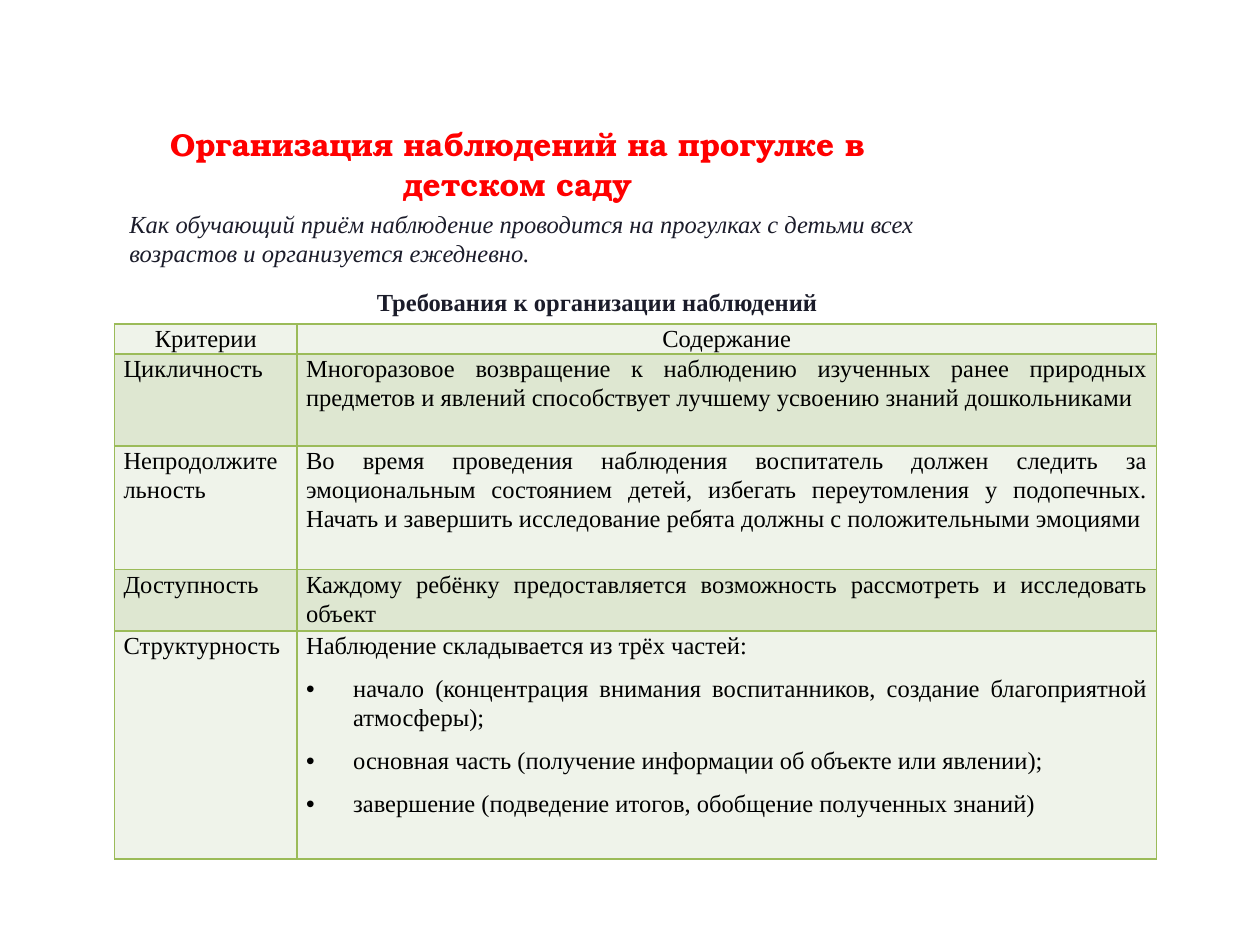
import lxml.etree
import pptx
import pptx.dml.color
import pptx.enum.text
import pptx.oxml
import pptx.oxml.ns
import pptx.util

Cm = pptx.util.Cm
Pt = pptx.util.Pt
ALIGN = pptx.enum.text.PP_ALIGN
qn = pptx.oxml.ns.qn

BODY_FONT = "Times New Roman"
TITLE_FONT = "TeX Gyre Bonum"
INK = "1B1C2A"
BORDER = "9BBB59"
BANDS = ("EFF3EA", "DEE7D1")
COLUMN_WIDTHS = (3.68, 17.32)

CRITERIA = [
    (0.61, "Критерии", ["Содержание"]),
    (1.85, "Цикличность", [
        "Многоразовое возвращение к наблюдению изученных ранее природных предметов "
        "и явлений способствует лучшему усвоению знаний дошкольниками"]),
    (2.49, "Непродолжительность", [
        "Во время проведения наблюдения воспитатель должен следить за эмоциональным "
        "состоянием детей, избегать переутомления у подопечных. Начать и завершить "
        "исследование ребята должны с положительными эмоциями"]),
    (1.24, "Доступность", [
        "Каждому ребёнку предоставляется возможность рассмотреть и исследовать объект"]),
    (4.6, "Структурность", [
        "Наблюдение складывается из трёх частей:",
        "начало (концентрация внимания воспитанников, создание благоприятной атмосферы);",
        "основная часть (получение информации об объекте или явлении);",
        "завершение (подведение итогов, обобщение полученных знаний)"]),
]


def rgb(value):
    """Turn a hex string into a colour."""
    return pptx.dml.color.RGBColor.from_string(value)


def style(paragraph, color, size=14, font=BODY_FONT, bold=False, italic=False):
    """Format every run of a paragraph."""
    for run in paragraph.runs:
        run.font.name = font
        run.font.size = Pt(size)
        run.font.bold = bold
        run.font.italic = italic
        run.font.color.rgb = rgb(color)


def space(paragraph, after):
    """Set the line spacing and the gap below a paragraph."""
    paragraph.line_spacing = 1.07
    paragraph.space_after = Pt(after)


def add_bullet(paragraph):
    """Give a paragraph a hanging bullet."""
    properties = paragraph._p.get_or_add_pPr()
    properties.set("marL", str(Cm(0.95)))
    properties.set("indent", str(-Cm(0.95)))
    lxml.etree.SubElement(properties, qn("a:buFont"), typeface="Arial")
    lxml.etree.SubElement(properties, qn("a:buChar"), char="•")


def add_borders(cell):
    """Draw the four borders of a cell."""
    properties = cell._tc.get_or_add_tcPr()
    for side in ("a:lnL", "a:lnR", "a:lnT", "a:lnB"):
        line = lxml.etree.SubElement(properties, qn(side), w=str(Pt(1)))
        fill = lxml.etree.SubElement(line, qn("a:solidFill"))
        lxml.etree.SubElement(fill, qn("a:srgbClr"), val=BORDER)


def fill_cell(cell, lines, band, alignment, after):
    """Write the lines of one cell, bulleted after the first."""
    cell.margin_left = cell.margin_right = Cm(0.18)
    cell.margin_top = cell.margin_bottom = 0
    add_borders(cell)
    cell.fill.solid()
    cell.fill.fore_color.rgb = rgb(band)
    cell.text_frame.text = "\n".join(lines)
    for index, paragraph in enumerate(cell.text_frame.paragraphs):
        paragraph.alignment = alignment
        space(paragraph, after)
        if index:
            add_bullet(paragraph)
        style(paragraph, "000000")


def add_text(slide, box, text, alignment, color, **look):
    """Place one wrapped paragraph in a box and return the paragraph."""
    frame = slide.shapes.add_textbox(*map(Cm, box)).text_frame
    frame.word_wrap = True
    frame.auto_size = pptx.enum.text.MSO_AUTO_SIZE.SHAPE_TO_FIT_TEXT
    frame.text = text
    paragraph = frame.paragraphs[0]
    paragraph.alignment = alignment
    style(paragraph, color, **look)
    return paragraph


def add_heading(slide, left, top):
    """Place the title, the introduction and the table caption."""
    title = add_text(slide, (left, top, 17.07, 1.85),
                     "Организация наблюдений на прогулке в детском саду",
                     ALIGN.CENTER, "FF0000", size=18, font=TITLE_FONT, bold=True)
    space(title, 8)
    add_text(slide, (left + 0.46, top + 1.75, 16.61, 1.45),
             "Как обучающий приём наблюдение проводится на прогулках с детьми "
             "всех возрастов и организуется ежедневно.",
             ALIGN.LEFT, INK, italic=True)
    add_text(slide, (left + 3.79, top + 3.32, 12.7, 0.86),
             "Требования к организации наблюдений", ALIGN.CENTER, INK, bold=True)


def add_criteria(slide, left, top):
    """Place the table of requirements."""
    height = sum(row[0] for row in CRITERIA)
    table = slide.shapes.add_table(
        len(CRITERIA), len(COLUMN_WIDTHS), Cm(left), Cm(top),
        Cm(sum(COLUMN_WIDTHS)), Cm(height)).table
    for column, width in zip(table.columns, COLUMN_WIDTHS):
        column.width = Cm(width)
    for index, (row_height, criterion, content) in enumerate(CRITERIA):
        table.rows[index].height = Cm(row_height)
        alignment = ALIGN.JUSTIFY if index else ALIGN.CENTER
        band = BANDS[index % 2]
        fill_cell(table.cell(index, 0), [criterion], band, alignment, 15 if index else 8)
        fill_cell(table.cell(index, 1), content, band, alignment, 8)


def main():
    """Build and save the slide."""
    deck = pptx.Presentation()
    deck.slide_width = Cm(25.4)
    deck.slide_height = Cm(19.05)
    slide = deck.slides.add_slide(deck.slide_layouts[6])
    add_criteria(slide, 2.31, 6.53)
    add_heading(slide, 1.9, 2.34)
    deck.save("out.pptx")


if __name__ == "__main__":
    main()
